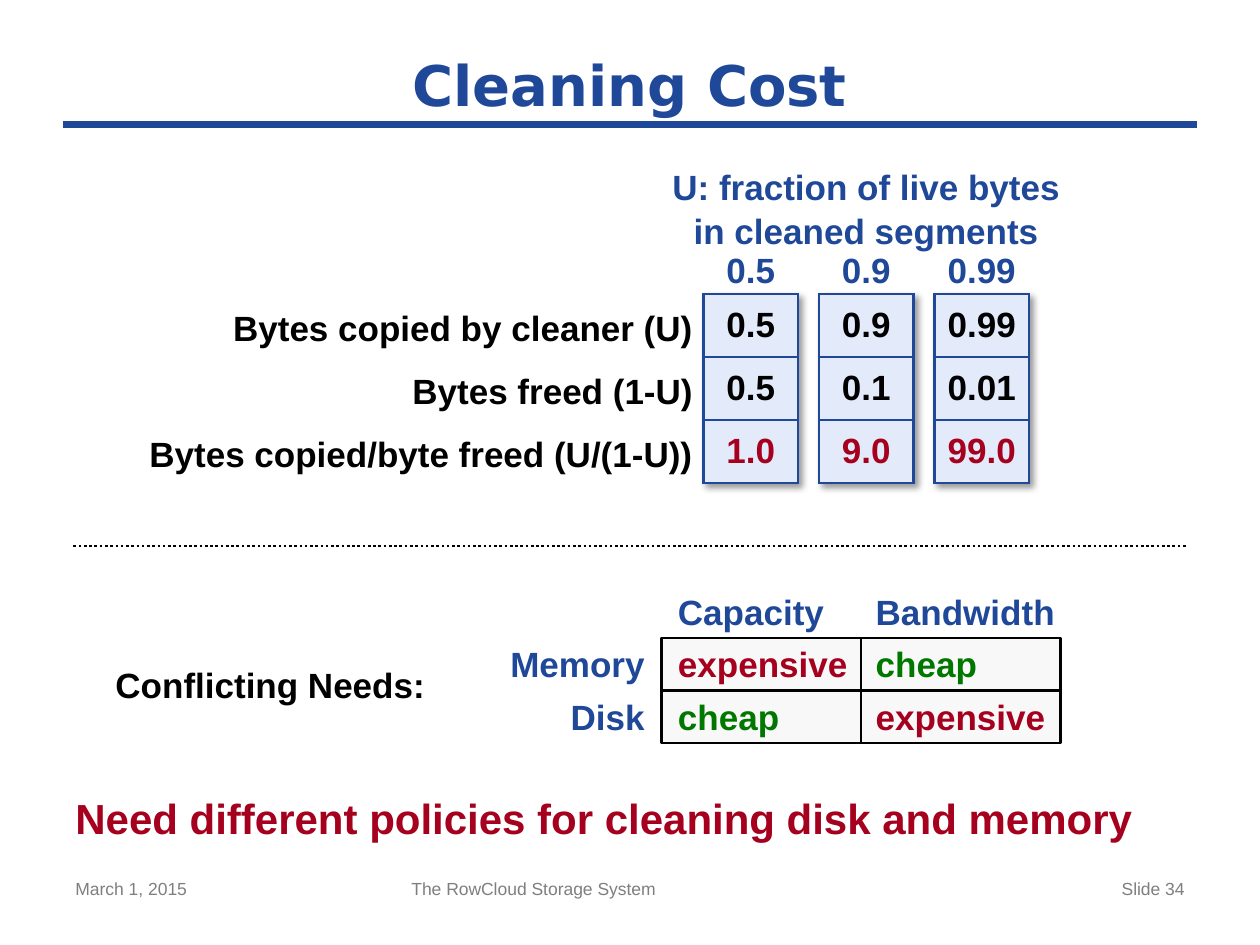
import pptx
import pptx.dml.color
import pptx.enum.dml
import pptx.enum.shapes
import pptx.enum.text
import pptx.oxml
import pptx.oxml.ns
import pptx.util

Pt = pptx.util.Pt
ALIGN = pptx.enum.text.PP_ALIGN
MIDDLE = pptx.enum.text.MSO_ANCHOR.MIDDLE
RGB = pptx.dml.color.RGBColor.from_string
NAMESPACE = pptx.oxml.ns.nsdecls("a")
COLORS = {
    "blue": "1F4899", "red": "A5001E", "green": "007800", "black": "000000",
    "gray": "7F7F7F", "cell": "E3EAF9", "grid": "F8F8F8",
}

deck = pptx.Presentation()
deck.slide_width, deck.slide_height = Pt(720), Pt(540)
page = deck.slides.add_slide(deck.slide_layouts[6])


def add_text(text, left, top, width, height=24, size=20, color="black", bold=True,
             font="Arial", align=ALIGN.LEFT, anchor=None, inset=False, spacing=1.05):
    box = page.shapes.add_textbox(Pt(left), Pt(top), Pt(width), Pt(height))
    frame = box.text_frame
    frame.word_wrap = True
    if anchor is not None:
        frame.vertical_anchor = anchor
    if not inset:
        frame.margin_left = frame.margin_right = 0
        frame.margin_top = frame.margin_bottom = 0
    para = frame.paragraphs[0]
    para.text = text
    para.alignment = align
    para.line_spacing = spacing
    for span in para.runs:
        span.font.name, span.font.size, span.font.bold = font, Pt(size), bold
        span.font.color.rgb = RGB(COLORS[color])


def add_line(x1, y1, x2, y2, color="black", weight=1.5):
    line = page.shapes.add_connector(
        pptx.enum.shapes.MSO_CONNECTOR.STRAIGHT, Pt(x1), Pt(y1), Pt(x2), Pt(y2))
    line.line.color.rgb = RGB(COLORS[color])
    line.line.width = Pt(weight)
    line._element.spPr.append(pptx.oxml.parse_xml(f"<a:effectLst {NAMESPACE}/>"))
    return line


# Title and rule
add_line(36, 71.3, 684, 71.3, color="blue", weight=4)
add_text("Cleaning Cost", 36, 24, 648, 48, size=32, color="blue", font="DejaVu Sans",
         align=ALIGN.CENTER, anchor=MIDDLE, inset=True, spacing=1)

# Cost columns, one table for each U
add_text("U: fraction of live bytes\vin cleaned segments", 372, 90, 246, 55.4,
         color="blue", align=ALIGN.CENTER, inset=True)
costs = {
    "0.5": ["0.5", "0.5", "1.0"],
    "0.9": ["0.9", "0.1", "9.0"],
    "0.99": ["0.99", "0.01", "99.0"],
}
for column, (fraction, values) in enumerate(costs.items()):
    left = 402 + 66 * column
    add_text(fraction, left + 6, 141, 42, color="blue", align=ALIGN.CENTER)
    table = page.shapes.add_table(3, 1, Pt(left), Pt(168), Pt(54), Pt(108)).table
    table.first_row = table.horz_banding = False
    table._tbl.tblPr.insert(0, pptx.oxml.parse_xml(
        f'<a:effectLst {NAMESPACE}><a:outerShdw blurRad="50800" dist="38100" dir="2700000">'
        '<a:srgbClr val="000000"><a:alpha val="40000"/></a:srgbClr>'
        '</a:outerShdw></a:effectLst>'))
    for row, value in enumerate(values):
        cell = table.cell(row, 0)
        cell.vertical_anchor = MIDDLE
        cell.margin_left = cell.margin_right = Pt(3)
        para = cell.text_frame.paragraphs[0]
        para.alignment = ALIGN.CENTER
        span = para.add_run()
        span.text = value
        span.font.name, span.font.size, span.font.bold = "Arial", Pt(20), True
        span.font.color.rgb = RGB(COLORS["red" if row == 2 else "black"])
        cell.fill.solid()
        cell.fill.fore_color.rgb = RGB(COLORS["cell"])
        for position, side in enumerate(["lnL", "lnR", "lnT", "lnB"]):
            cell._tc.tcPr.insert(position, pptx.oxml.parse_xml(
                f'<a:{side} {NAMESPACE} w="{Pt(1.5)}"><a:solidFill>'
                f'<a:srgbClr val="{COLORS["blue"]}"/></a:solidFill></a:{side}>'))

# Row labels, flush right against the tables
row_labels = [("Bytes copied by cleaner (U)", 264), ("Bytes freed (1-U)", 264),
              ("Bytes copied/byte freed (U/(1-U))", 336)]
for row, (label, width) in enumerate(row_labels):
    add_text(label, 396 - width, 174 + 36 * row, width, align=ALIGN.RIGHT)

# Dotted divider
divider = add_line(42, 312, 678, 312)
divider.line.dash_style = pptx.enum.dml.MSO_LINE.ROUND_DOT

# Two by two grid of conflicting needs
grid = page.shapes.add_shape(pptx.enum.shapes.MSO_SHAPE.RECTANGLE,
                             Pt(378), Pt(364.5), Pt(228), Pt(60))
grid.shadow.inherit = False
grid.fill.solid()
grid.fill.fore_color.rgb = RGB(COLORS["grid"])
grid.line.color.rgb = RGB(COLORS["black"])
grid.line.width = Pt(1.5)
for start, end in [(0, 2), (1, 3)]:
    line = add_line(378, 364.5, 606, 424.5)
    line.begin_connect(grid, start)
    line.end_connect(grid, end)

add_text("Conflicting Needs:", 66, 378, 222)
column_lefts = [387.4, 500.4]
for left, heading in zip(column_lefts, ["Capacity", "Bandwidth"]):
    add_text(heading, left, 336, 114, color="blue")
needs = {"Memory": ["expensive", "cheap"], "Disk": ["cheap", "expensive"]}
for row, (medium, prices) in enumerate(needs.items()):
    top = 366 + 30 * row
    add_text(medium, 284.4, top, 84, color="blue", align=ALIGN.RIGHT)
    for left, price in zip(column_lefts, prices):
        add_text(price, left, top, 120, color="green" if price == "cheap" else "red")

# Conclusion
add_text("Need different policies for cleaning disk and memory", 36, 448, 648, 38,
         size=24, color="red", anchor=MIDDLE, inset=True, spacing=1)

# Footer
for text, left, width, align in [
    ("March 1, 2015", 36, 168, ALIGN.LEFT),
    ("The RowCloud Storage System", 228, 270, ALIGN.LEFT),
    ("Slide 34", 516, 168, ALIGN.RIGHT),
]:
    add_text(text, left, 498, width, 31, size=10, color="gray", bold=False,
             align=align, inset=True, spacing=1)

deck.save("out.pptx")
